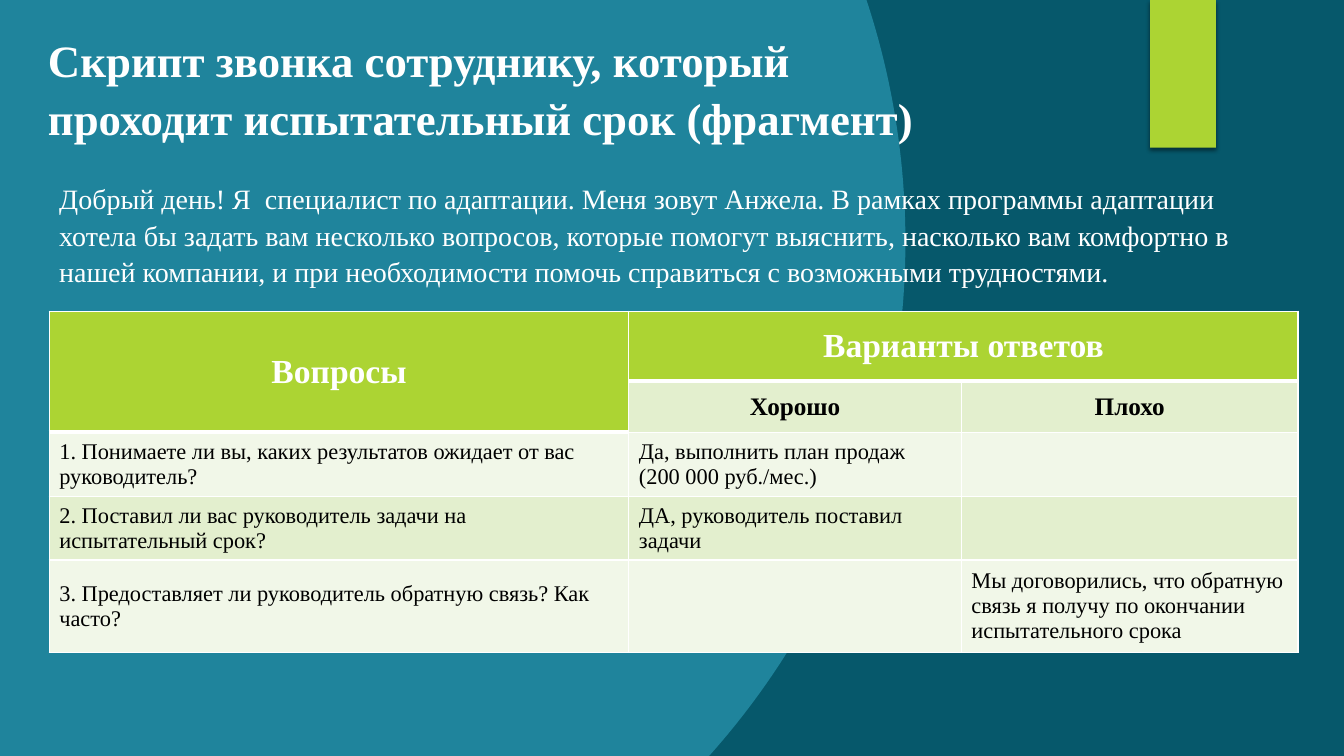
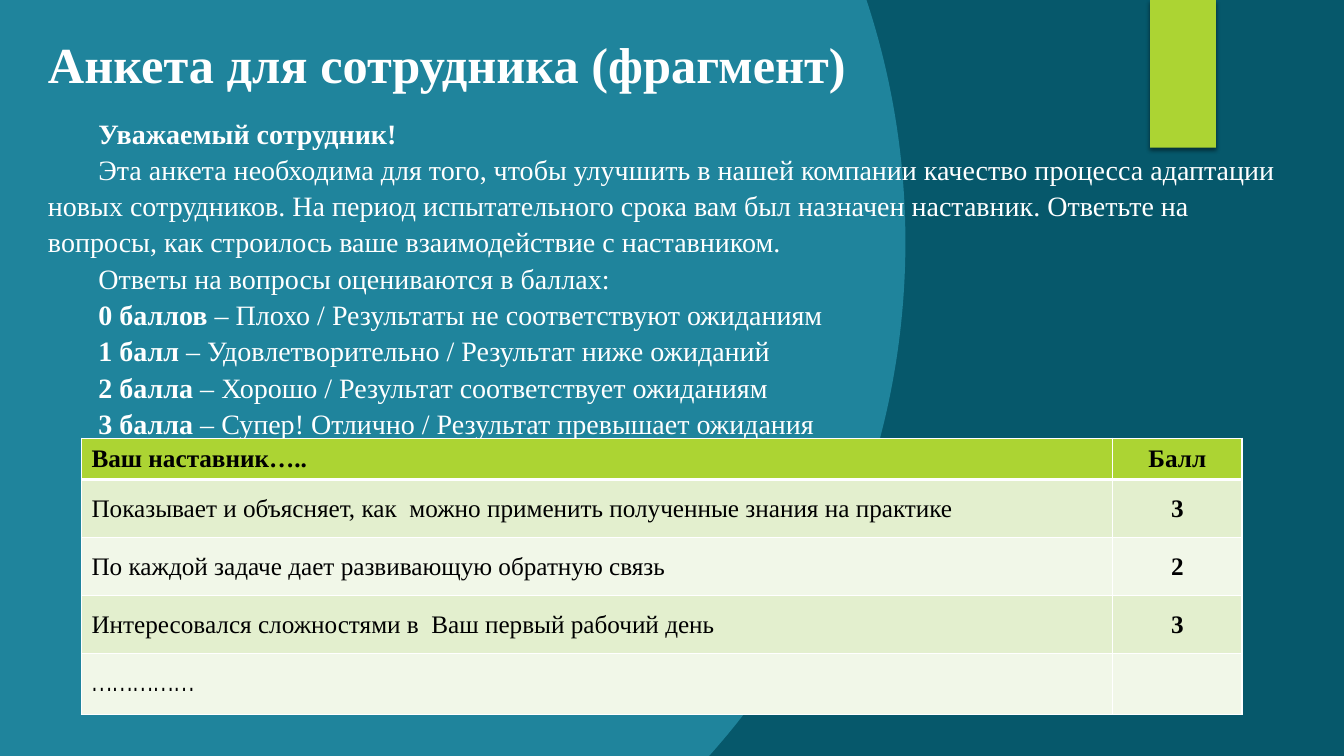
"""Two slides on onboarding: a call script and an employee survey."""
import lxml.etree
import pptx
import pptx.dml.color
import pptx.enum.shapes
import pptx.enum.text
import pptx.oxml.ns
import pptx.util

Pt = pptx.util.Pt
qn = pptx.oxml.ns.qn
ALIGN = pptx.enum.text.PP_ALIGN
ANCHOR = pptx.enum.text.MSO_ANCHOR

COLORS = {
    "teal": "1F849C",
    "deep": "06586B",
    "lime": "ACD433",
    "band": "E3EFCE",
    "pale": "F1F7E8",
    "white": "FFFFFF",
    "black": "000000",
}
FONT = "Times New Roman"

CELL_STYLES = {
    "header": dict(size=24, color="white", bold=True, align=ALIGN.CENTER),
    "header_left": dict(size=18, bold=True),
    "header_center": dict(size=18, bold=True, align=ALIGN.CENTER),
    "strong": dict(size=18, bold=True, align=ALIGN.CENTER),
    "small": dict(size=16),
    "normal": dict(size=18),
    "dots": dict(size=18, font="TeX Gyre Adventor"),
}

SLIDES = [
    dict(
        title="Скрипт звонка сотруднику, который проходит испытательный срок (фрагмент)",
        title_size=32,
        title_height=107,
        body=[
            ("", "Добрый день! Я  специалист по адаптации. Меня зовут Анжела. "
                 "В рамках программы адаптации хотела бы задать вам несколько вопросов, "
                 "которые помогут выяснить, насколько вам комфортно в нашей компании, "
                 "и при необходимости помочь справиться с возможными трудностями."),
        ],
        body_box=(35.2, 124.5, 892, 80),
        indent=0,
        table_at=(35.2, 222.3),
        columns=[414, 237.5, 240.5],
        heights=[50, 36.5, 45.5, 45.5, 66],
        merges=[(0, 0, 1, 0), (0, 1, 0, 2)],
        rows=[
            [("Вопросы", "header"), ("Варианты ответов", "header"), ("", "header")],
            [("", "header"), ("Хорошо", "strong"), ("Плохо", "strong")],
            [("1. Понимаете ли вы, каких результатов ожидает от вас руководитель?", "small"),
             ("Да, выполнить план продаж (200 000 руб./мес.)", "small"), ("", "small")],
            [("2. Поставил ли вас руководитель задачи на испытательный срок?", "small"),
             ("ДА, руководитель поставил задачи", "small"), ("", "small")],
            [("3. Предоставляет ли руководитель обратную связь? Как часто?", "small"),
             ("", "small"),
             ("Мы договорились, что обратную связь я получу по окончании "
              "испытательного срока", "small")],
        ],
    ),
    dict(
        title="Анкета для сотрудника (фрагмент)",
        title_size=36,
        title_height=61,
        body=[
            ("Уважаемый сотрудник!", ""),
            ("", "Эта анкета необходима для того, чтобы улучшить в нашей компании качество "
                 "процесса адаптации новых сотрудников. На период испытательного срока вам "
                 "был назначен наставник. Ответьте на вопросы, как строилось ваше "
                 "взаимодействие с наставником."),
            ("", "Ответы на вопросы оцениваются в баллах:"),
            ("0 баллов ", "– Плохо / Результаты не соответствуют ожиданиям"),
            ("1 балл ", "– Удовлетворительно / Результат ниже ожиданий"),
            ("2 балла ", "– Хорошо / Результат соответствует ожиданиям"),
            ("3 балла ", "– Супер! Отлично / Результат превышает ожидания"),
        ],
        body_box=(27.2, 77.5, 892, 225.5),
        indent=36,
        table_at=(58.2, 313),
        columns=[736.5, 92.5],
        heights=[29.5, 41.5, 41.5, 41.5, 43.5],
        merges=[],
        rows=[
            [("Ваш наставник…..", "header_left"), ("Балл", "header_center")],
            [("Показывает и объясняет, как  можно применить полученные знания на практике",
              "normal"), ("3", "strong")],
            [("По каждой задаче дает развивающую обратную связь", "normal"), ("2", "strong")],
            [("Интересовался сложностями в  Ваш первый рабочий день", "normal"),
             ("3", "strong")],
            [("……………", "dots"), ("", "strong")],
        ],
    ),
]


def rgb(name):
    """Return a palette colour."""
    return pptx.dml.color.RGBColor.from_string(COLORS[name])


def add_node(parent, tag, **attributes):
    """Append a drawing element with attributes."""
    node = lxml.etree.SubElement(parent, qn(tag))
    for key, value in attributes.items():
        node.set(key, str(value))
    return node


def write_text(frame, paragraphs, size=20, color="black", bold=False, align=ALIGN.LEFT,
               font=FONT, indent=0, spacing=None):
    """Fill a frame with paragraphs, each a (bold lead, remaining text) pair."""
    frame.word_wrap = True
    for number, (lead, rest) in enumerate(paragraphs):
        para = frame.add_paragraph() if number else frame.paragraphs[0]
        para.alignment = align
        if spacing:
            para.line_spacing = spacing
        if indent:
            para._p.get_or_add_pPr().set("indent", str(Pt(indent)))
        for text, strong in ((lead, True), (rest, bold)):
            if text:
                span = para.add_run()
                span.text = text
                span.font.name = font
                span.font.size = Pt(size)
                span.font.bold = strong
                span.font.color.rgb = rgb(color)


def add_text(page, box, paragraphs, **style):
    """Add a text box."""
    frame = page.shapes.add_textbox(*map(Pt, box)).text_frame
    write_text(frame, paragraphs, color="white", spacing=1.08, **style)


def set_background(master):
    """Give the master a two-tone background with a circular edge."""
    master.background.fill.gradient()
    gradient = master.element.find(".//" + qn("a:gradFill"))
    for child in list(gradient):
        gradient.remove(child)
    stops = add_node(gradient, "a:gsLst")
    for name in ("teal", "deep"):
        add_node(add_node(stops, "a:gs", pos=100000), "a:srgbClr", val=COLORS[name])
    circle = add_node(gradient, "a:path", path="circle")
    add_node(circle, "a:fillToRect", l=45000, t=65000, r=125000, b=100000)


def add_ribbon(page):
    """Add the lime ribbon with its soft shadow."""
    ribbon = page.shapes.add_shape(pptx.enum.shapes.MSO_SHAPE.RECTANGLE,
                                   Pt(821.5), Pt(0), Pt(47), Pt(105.5))
    ribbon.fill.solid()
    ribbon.fill.fore_color.rgb = rgb("lime")
    ribbon.line.fill.background()
    ribbon.shadow.inherit = False
    effects = ribbon._element.spPr.find(qn("a:effectLst"))
    shadow = add_node(effects, "a:outerShdw", blurRad=Pt(3), dist=Pt(2), dir=5400000,
                      rotWithShape=0)
    add_node(add_node(shadow, "a:srgbClr", val=COLORS["black"]), "a:alpha", val=45000)


def set_borders(cell, top, bottom):
    """Draw white borders around a cell, widths in points."""
    props = cell._tc.get_or_add_tcPr()
    widths = {"a:lnL": 1, "a:lnR": 1, "a:lnT": top, "a:lnB": bottom}
    for position, (tag, width) in enumerate(widths.items()):
        line = add_node(props, tag, w=Pt(width))
        add_node(add_node(line, "a:solidFill"), "a:srgbClr", val=COLORS["white"])
        props.insert(position, line)


def add_grid(page, content):
    """Add the table with header and alternating row fills."""
    rows, columns, heights = content["rows"], content["columns"], content["heights"]
    box = (*content["table_at"], sum(columns), sum(heights))
    table = page.shapes.add_table(len(rows), len(columns), *map(Pt, box)).table
    for column, width in zip(table.columns, columns):
        column.width = Pt(width)
    for row, height in zip(table.rows, heights):
        row.height = Pt(height)
    for top, left, bottom, right in content["merges"]:
        table.cell(top, left).merge(table.cell(bottom, right))
    for r, row in enumerate(rows):
        for c, (text, style) in enumerate(row):
            cell = table.cell(r, c)
            header = style.startswith("header")
            below_header = r > 0 and rows[r - 1][c][1].startswith("header")
            cell.fill.solid()
            cell.fill.fore_color.rgb = rgb("lime" if header else ("pale", "band")[r % 2])
            cell.vertical_anchor = ANCHOR.MIDDLE
            set_borders(cell, 3 if below_header else 1, 3 if header else 1)
            if text:
                write_text(cell.text_frame, [("", text)], **CELL_STYLES[style])


def main():
    """Build and save the deck."""
    deck = pptx.Presentation()
    deck.slide_width, deck.slide_height = Pt(960), Pt(540)
    set_background(deck.slide_master)
    for content in SLIDES:
        page = deck.slides.add_slide(deck.slide_layouts[6])
        add_ribbon(page)
        add_text(page, (27.2, 16.5, 669.5, content["title_height"]),
                 [("", content["title"])], size=content["title_size"], bold=True)
        add_text(page, content["body_box"], content["body"], indent=content["indent"])
        add_grid(page, content)
    deck.save("out.pptx")


if __name__ == "__main__":
    main()
